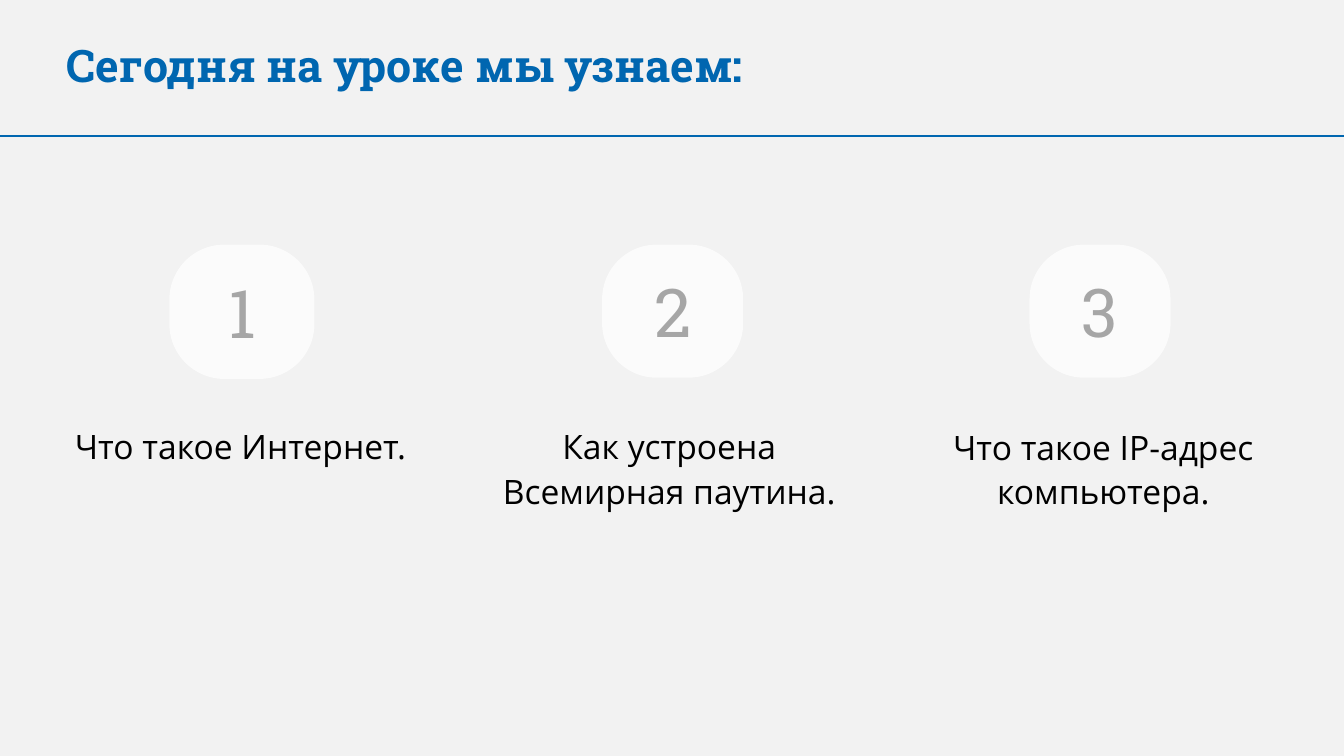
from dataclasses import dataclass

from lxml import etree
from pptx import Presentation
from pptx.dml.color import RGBColor
from pptx.enum.shapes import MSO_CONNECTOR, MSO_SHAPE
from pptx.enum.text import MSO_ANCHOR, MSO_AUTO_SIZE, PP_ALIGN
from pptx.oxml.ns import qn
from pptx.slide import Slide
from pptx.text.text import _Paragraph
from pptx.util import Pt

STRAIGHT = MSO_CONNECTOR.STRAIGHT
ROUNDED = MSO_SHAPE.ROUNDED_RECTANGLE
MIDDLE = MSO_ANCHOR.MIDDLE
GROW = MSO_AUTO_SIZE.SHAPE_TO_FIT_TEXT
LEFT, CENTER = PP_ALIGN.LEFT, PP_ALIGN.CENTER

COLORS = {
    "background": "F2F2F2",
    "accent": "0066B0",
    "text": "000000",
    "badge": "FFFFFF",
    "number": "A6A6A6",
}
HEADING_FONT = "Roboto Slab"
BODY_FONT = "Open Sans"
SLIDE_W, SLIDE_H = 720, 405
RULE_Y = 72.72
BADGE_TOP = 131.04
TOPIC_TOP = 222.48


@dataclass
class Topic:
    text: str
    left: float
    width: float
    height: float
    badge_left: float
    badge_width: float = 75.6
    badge_height: float = 71.28


TOPICS = [
    Topic("Что такое Интернет.", 28.8, 200.16, 31.68, 90.72, 77.76, 72),
    Topic("Как устроена Всемирная паутина.", 257.76, 201.6, 55.44, 322.56),
    Topic("Что такое IP-адрес компьютера.", 490.32, 201.6, 54, 551.52),
]


def rgb(name: str) -> RGBColor:
    return RGBColor.from_string(COLORS[name])


def style(p: _Paragraph, text: str, font: str, size: float, color: str,
          align: PP_ALIGN) -> None:
    p.text = text
    p.alignment = align
    p.font.name = font
    p.font.size = Pt(size)
    p.font.color.rgb = rgb(color)


def add_text(s: Slide, left: float, top: float, width: float,
             height: float) -> _Paragraph:
    tf = s.shapes.add_textbox(Pt(left), Pt(top), Pt(width), Pt(height)).text_frame
    tf.word_wrap = True
    tf.auto_size = GROW
    return tf.paragraphs[0]


def add_title(s: Slide, text: str) -> None:
    p = add_text(s, 28.8, 16.56, 484.56, 36)
    style(p, text, HEADING_FONT, 24, "accent", LEFT)
    p.font.bold = True


def add_rule(s: Slide) -> None:
    line = s.shapes.add_connector(STRAIGHT, Pt(0), Pt(RULE_Y), Pt(SLIDE_W), Pt(RULE_Y))
    line.line.color.rgb = rgb("accent")
    line.line.width = Pt(1)
    etree.SubElement(line._element.spPr, qn("a:effectLst"))


def add_badge(s: Slide, number: int, topic: Topic) -> None:
    sp = s.shapes.add_shape(ROUNDED, Pt(topic.badge_left), Pt(BADGE_TOP),
                            Pt(topic.badge_width), Pt(topic.badge_height))
    sp.adjustments[0] = 0.41
    sp.shadow.inherit = False
    sp.line.fill.background()
    sp.fill.solid()
    sp.fill.fore_color.rgb = rgb("badge")
    color = sp._element.spPr.find(qn("a:solidFill"))[0]
    etree.SubElement(color, qn("a:alpha"), val="75000")
    tf = sp.text_frame
    tf.margin_left = tf.margin_top = tf.margin_right = tf.margin_bottom = 0
    tf.word_wrap = False
    tf.vertical_anchor = MIDDLE
    style(tf.paragraphs[0], str(number), HEADING_FONT, 36, "number", CENTER)


def add_topic(s: Slide, number: int, topic: Topic) -> None:
    p = add_text(s, topic.left, TOPIC_TOP, topic.width, topic.height)
    style(p, topic.text, BODY_FONT, 18, "text", CENTER)
    p.line_spacing = Pt(24)
    add_badge(s, number, topic)


def main() -> None:
    prs = Presentation()
    prs.slide_width, prs.slide_height = Pt(SLIDE_W), Pt(SLIDE_H)
    s = prs.slides.add_slide(prs.slide_layouts[6])
    s.background.fill.solid()
    s.background.fill.fore_color.rgb = rgb("background")
    add_title(s, "Сегодня на уроке мы узнаем:")
    add_rule(s)
    for number, topic in enumerate(TOPICS, 1):
        add_topic(s, number, topic)
    prs.save("out.pptx")


if __name__ == "__main__":
    main()
